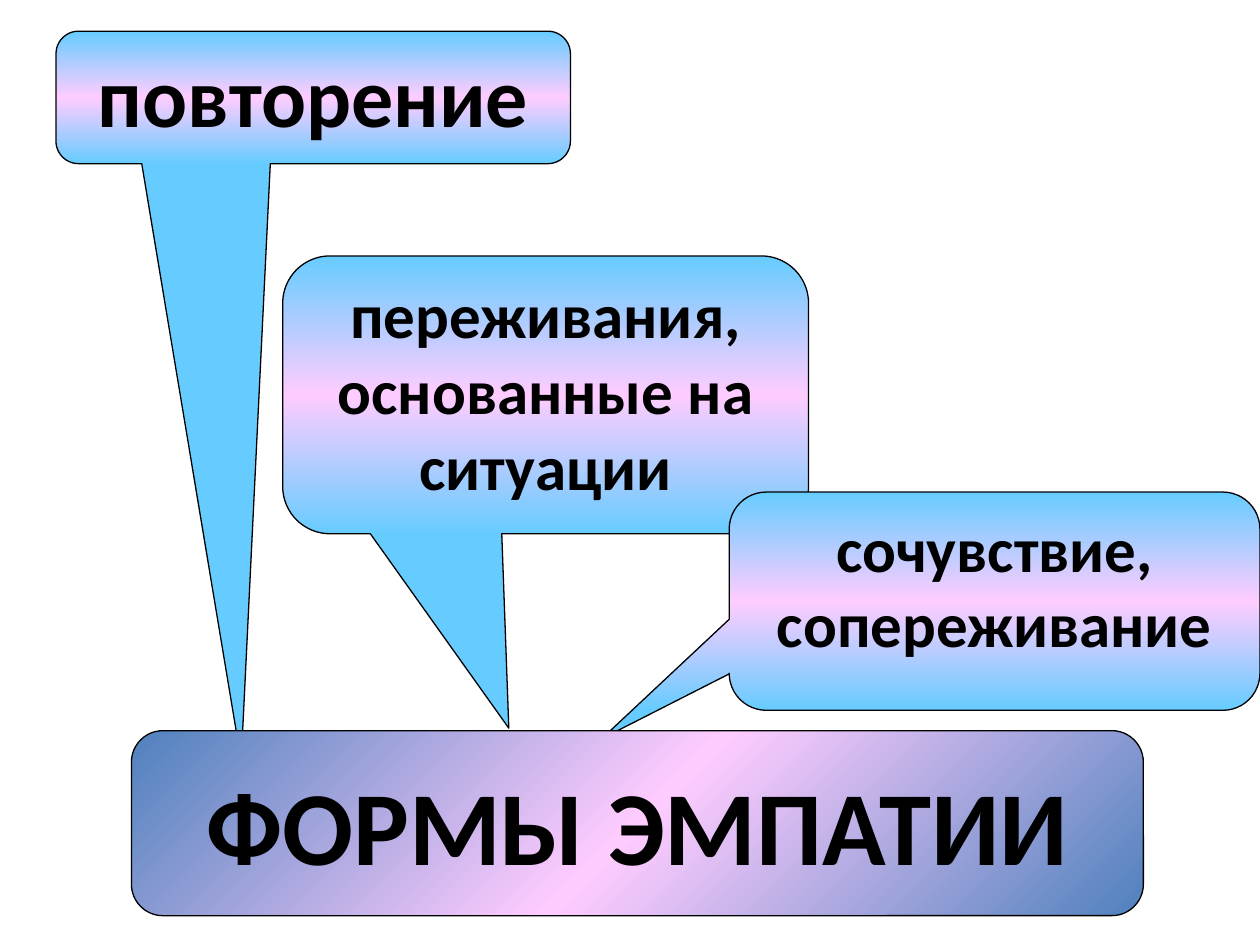
from copy import deepcopy

from pptx import Presentation
from pptx.dml.color import RGBColor
from pptx.enum.shapes import MSO_SHAPE
from pptx.enum.text import MSO_ANCHOR, PP_ALIGN
from pptx.oxml.ns import qn
from pptx.util import Cm, Pt

COLORS = {"sky": "66CCFF", "pink": "FFCCFF", "blue": "4F81BD", "black": "000000"}


def fill_gradient(shape, edge, middle, angle):
    """Blend from the edge colour to the middle colour and back."""
    shape.fill.gradient()
    shape.fill.gradient_angle = angle
    stop_list = shape._element.spPr.find(qn("a:gradFill")).find(qn("a:gsLst"))
    stop_list.append(deepcopy(stop_list[-1]))
    for stop, color, position in zip(
        shape.fill.gradient_stops, (edge, middle, edge), (0, 0.5, 1)
    ):
        stop.color.rgb = RGBColor.from_string(COLORS[color])
        stop.position = position


def add_label(text, kind, box, adjustments, size, edge="sky", angle=270,
              anchor=MSO_ANCHOR.TOP, wrap=True):
    """Add an outlined gradient shape with bold centred text."""
    shape = slide.shapes.add_shape(kind, *(Cm(value) for value in box))
    shape.shadow.inherit = False
    for index, value in enumerate(adjustments):
        shape.adjustments[index] = value
    fill_gradient(shape, edge, "pink", angle)
    shape.line.color.rgb = RGBColor.from_string(COLORS["black"])
    shape.line.width = Pt(0.75)

    frame = shape.text_frame
    frame.word_wrap = wrap
    frame.vertical_anchor = anchor
    paragraph = frame.paragraphs[0]
    paragraph.alignment = PP_ALIGN.CENTER
    run = paragraph.add_run()
    run.text = text
    run.font.name = "Calibri"
    run.font.size = Pt(size)
    run.font.bold = True
    run.font.color.rgb = RGBColor.from_string(COLORS["black"])


presentation = Presentation()
presentation.slide_width, presentation.slide_height = Cm(25.4), Cm(19.05)
slide = presentation.slides.add_slide(presentation.slide_layouts[6])

# Callouts: text, box (left, top, width, height), pointer tip, text size
callouts = [
    ("повторение", (1.13, 0.63, 10.37, 2.67), (-0.14, 5.01), 48),
    ("переживания, основанные на ситуации", (5.7, 5.16, 10.6, 5.6), (-0.07, 1.2), 36),
    ("сочувствие, сопереживание", (14.7, 9.92, 10.7, 4.4), (-0.74, 0.63), 36),
]
for text, box, tip, size in callouts:
    add_label(text, MSO_SHAPE.ROUNDED_RECTANGULAR_CALLOUT, box, (*tip, 0.17), size)

# Heading bar in front of the pointer tips
add_label("ФОРМЫ ЭМПАТИИ", MSO_SHAPE.ROUNDED_RECTANGLE, (2.65, 14.73, 20.4, 3.73),
          (0.17,), 60, edge="blue", angle=315, anchor=MSO_ANCHOR.MIDDLE, wrap=False)

presentation.save("out.pptx")
